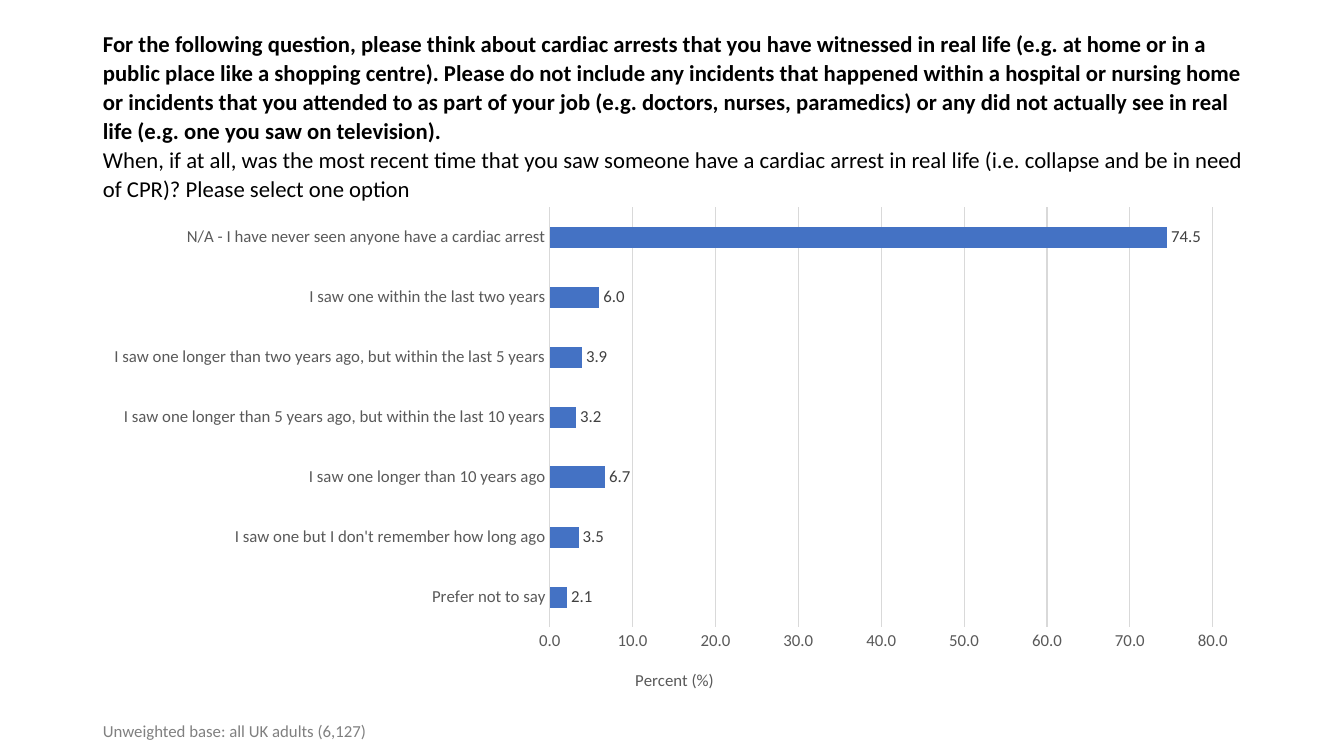
"""Build the slide on the most recent cardiac arrest witnessed."""
from lxml import etree
from pptx import Presentation
from pptx import util as u
from pptx.chart import data as chart_data
from pptx.dml.color import RGBColor
from pptx.enum import chart as ce, text
from pptx.oxml.ns import qn

PX = 914400 / 100.8
INTRO = (
    "For the following question, please think about cardiac arrests that you have witnessed in real life "
    "(e.g. at home or in a public place like a shopping centre). Please do not include any incidents that "
    "happened within a hospital or nursing home or incidents that you attended to as part of your job "
    "(e.g. doctors, nurses, paramedics) or any did not actually see in real life "
    "(e.g. one you saw on television)."
)
QUESTION = (
    "When, if at all, was the most recent time that you saw someone have a cardiac arrest in real life "
    "(i.e. collapse and be in need of CPR)? Please select one option"
)
BASE = "Unweighted base: all UK adults (6,127)"
AXIS_TITLE = "Percent (%)"
ANSWERS = {
    "Prefer not to say": 2.1,
    "I saw one but I don't remember how long ago": 3.5,
    "I saw one longer than 10 years ago": 6.7,
    "I saw one longer than 5 years ago, but within the last 10 years": 3.2,
    "I saw one longer than two years ago, but within the last 5 years": 3.9,
    "I saw one within the last two years": 6.0,
    "N/A - I have never seen anyone have a cardiac arrest": 74.5,
}
TITLE_BOX = (93, 42, 1159, 146)
CHART_BOX = (93, 197, 1159, 511)
BASE_BOX = (93, 716, 1213, 30)
PLOT_BOX = (550, 207, 663, 420)
AXIS_TITLE_AT = (632, 666)


def px(*lengths):
    return [u.Emu(round(length * PX)) for length in lengths]


def rgb(value):
    return RGBColor.from_string(value)


def set_all(target, **values):
    for name, value in values.items():
        setattr(target, name, value)


def style(font, color, size=12, bold=False):
    set_all(font, name="Calibri", size=u.Pt(size), bold=bold)
    font.color.rgb = rgb(color)


def add_text(slide, box, anchor):
    frame = slide.shapes.add_textbox(*px(*box)).text_frame
    set_all(frame, word_wrap=True, vertical_anchor=anchor)
    return frame.paragraphs[0]


def add_run(paragraph, words, **look):
    run = paragraph.add_run()
    run.text = words
    style(run.font, **look)


def place(parent, before, box, inner=False):
    """Fix a chart part at a position given in slide px."""
    for old in parent.findall(qn("c:layout")):
        parent.remove(old)
    layout = etree.Element(qn("c:layout"))
    manual = etree.SubElement(layout, qn("c:manualLayout"))
    left, top, width, height = CHART_BOX
    fractions = [(box[0] - left) / width, (box[1] - top) / height]
    fractions += [length / whole for length, whole in zip(box[2:], (width, height))]
    settings = [("layoutTarget", "inner")] if inner else []
    settings += [("xMode", "edge"), ("yMode", "edge")]
    settings += [(name, f"{value:.3f}") for name, value in zip("xywh", fractions)]
    for name, value in settings:
        etree.SubElement(manual, qn(f"c:{name}")).set("val", value)
    parent.find(qn(before)).addprevious(layout)


def add_answers_chart(slide):
    data = chart_data.CategoryChartData(number_format="0.0")
    data.categories = list(ANSWERS)
    data.add_series("Series 1", list(ANSWERS.values()))
    kind = ce.XL_CHART_TYPE.BAR_CLUSTERED
    chart = slide.shapes.add_chart(kind, *px(*CHART_BOX), data).chart
    set_all(chart, has_legend=False, has_title=False)
    style(chart.font, "000000")

    plot = chart.plots[0]
    set_all(plot, gap_width=182, vary_by_categories=False, has_data_labels=True)
    set_all(plot.data_labels, show_value=True, number_format="0.0", number_format_is_linked=False,
            position=ce.XL_LABEL_POSITION.OUTSIDE_END)
    style(plot.data_labels.font, "404040")
    fill = plot.series[0].format.fill
    fill.solid()
    fill.fore_color.rgb = rgb("4472C4")

    answers, percent = chart.category_axis, chart.value_axis
    for axis in (answers, percent):
        set_all(axis, major_tick_mark=ce.XL_TICK_MARK.NONE, minor_tick_mark=ce.XL_TICK_MARK.NONE)
        style(axis.tick_labels.font, "595959")
    set_all(percent, minimum_scale=0, maximum_scale=80, major_unit=10, has_major_gridlines=True)
    set_all(percent.tick_labels, number_format="0.0", number_format_is_linked=False)
    percent.format.line.fill.background()
    for line in (answers.format.line, percent.major_gridlines.format.line):
        line.width = u.Pt(0.75)
        line.color.rgb = rgb("D9D9D9")

    title = percent.axis_title
    add_run(title.text_frame.paragraphs[0], AXIS_TITLE, color="595959")
    place(title._element, "c:overlay", AXIS_TITLE_AT)
    place(plot._element.getparent(), "c:barChart", PLOT_BOX, inner=True)


def main():
    presentation = Presentation()
    set_all(presentation, slide_width=u.Inches(13.33), slide_height=u.Inches(7.5))
    slide = presentation.slides.add_slide(presentation.slide_layouts[6])
    title = add_text(slide, TITLE_BOX, text.MSO_ANCHOR.MIDDLE)
    title.line_spacing = 1.07
    add_run(title, INTRO, color="000000", size=16.2, bold=True)
    title.add_line_break()
    add_run(title, QUESTION, color="000000", size=16.2)
    add_answers_chart(slide)
    add_run(add_text(slide, BASE_BOX, text.MSO_ANCHOR.TOP), BASE, color="808080")
    presentation.save("out.pptx")


if __name__ == "__main__":
    main()
